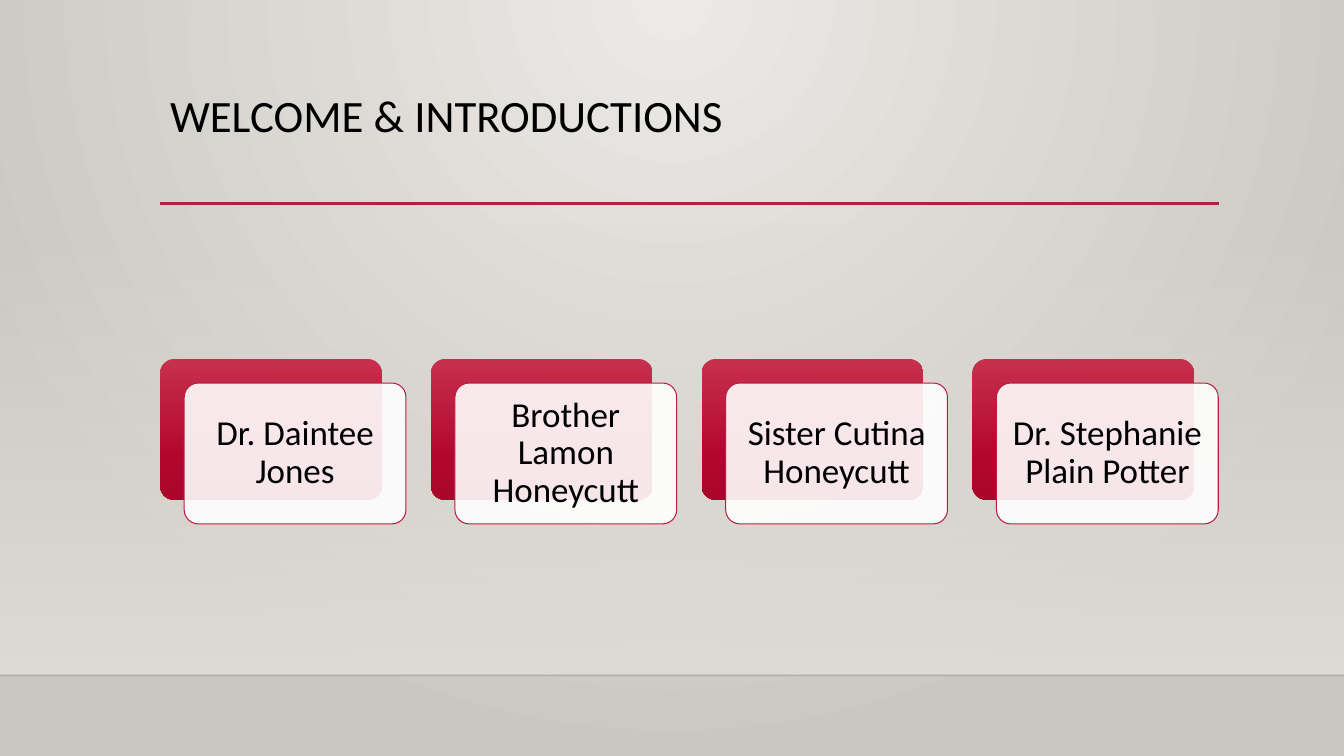
from lxml import etree
from pptx import Presentation
from pptx.dml.color import RGBColor
from pptx.enum import shapes, text
from pptx.oxml import ns
from pptx.util import Pt


def color(hex_code):
    return RGBColor.from_string(hex_code)


def add(parent, tag, **attributes):
    return etree.SubElement(parent, ns.qn(tag), {k: str(v) for k, v in attributes.items()})


def set_opacity(holder, percent):
    for paint in holder.iter(ns.qn("a:srgbClr")):
        add(paint, "a:alpha", val=percent * 1000)


class Slide:
    """Holds the deck, its style and the current page."""

    font = "Calibri"
    ink = "000000"
    accent = "B71E42"

    def __init__(self, width, height):
        self.deck = Presentation()
        self.deck.slide_width, self.deck.slide_height = Pt(width), Pt(height)
        self.page = self.deck.slides.add_slide(self.deck.slide_layouts[6])

    def gradient(self, fill, holder, stops, radial=False):
        fill.gradient()
        grad = next(holder.iter(ns.qn("a:gradFill")))
        for child in list(grad):
            grad.remove(child)
        stop_list = add(grad, "a:gsLst")
        for position, hex_code, opacity in stops:
            stop = add(stop_list, "a:gs", pos=position * 1000)
            add(stop, "a:srgbClr", val=color(hex_code))
            if opacity < 100:
                set_opacity(stop, opacity)
        if radial:
            path = add(grad, "a:path", path="circle")
            add(path, "a:fillToRect", l=43000, t=0, r=43000, b=100000)
        else:
            add(grad, "a:lin", ang=5400000, scaled=0)

    def background(self, stops):
        self.gradient(self.page.background.fill, self.page._element, stops, radial=True)

    def shape(self, kind, left, top, width, height):
        shape = self.page.shapes.add_shape(kind, Pt(left), Pt(top), Pt(width), Pt(height))
        shape.shadow.inherit = False
        shape.line.fill.background()
        return shape

    def band(self, left, top, width, height, stops):
        band = self.shape(shapes.MSO_SHAPE.RECTANGLE, left, top, width, height)
        self.gradient(band.fill, band._element, stops)

    def rounded(self, left, top, width, height):
        card = self.shape(shapes.MSO_SHAPE.ROUNDED_RECTANGLE, left, top, width, height)
        card.adjustments[0] = 0.1
        return card

    def back_card(self, left, top, width, height, stops):
        card = self.rounded(left, top, width, height)
        self.gradient(card.fill, card._element, stops)

    def front_card(self, left, top, width, height):
        card = self.rounded(left, top, width, height)
        card.fill.solid()
        card.fill.fore_color.rgb = color("FFFFFF")
        set_opacity(card._element.spPr, 90)
        card.line.color.rgb = color(self.accent)
        card.line.width = Pt(0.75)

    def rule(self, left, right, top, hex_code, weight, opacity=100):
        rule = self.page.shapes.add_connector(
            shapes.MSO_CONNECTOR.STRAIGHT, Pt(left), Pt(top), Pt(right), Pt(top))
        rule.line.color.rgb = color(hex_code)
        rule.line.width = Pt(weight)
        if opacity < 100:
            set_opacity(rule._element.spPr, opacity)
        add(rule._element.spPr, "a:effectLst")

    def label(self, words, left, top, width, height, size, centered=False):
        box = self.page.shapes.add_textbox(Pt(left), Pt(top), Pt(width), Pt(height))
        frame = box.text_frame
        frame.word_wrap = True
        para = frame.paragraphs[0]
        para.text = words
        para.line_spacing = 0.9
        para.font.name, para.font.size = self.font, Pt(size)
        para.font.color.rgb = color(self.ink)
        if centered:
            frame.margin_top = frame.margin_bottom = Pt(7.2)
            frame.vertical_anchor = text.MSO_ANCHOR.MIDDLE
            para.alignment = text.PP_ALIGN.CENTER


def main():
    names = ["Dr. Daintee Jones", "Brother Lamon Honeycutt",
             "Sister Cutina Honeycutt", "Dr. Stephanie Plain Potter"]
    red = [(0, "C7304C", 100), (69, "B3062F", 100), (100, "AA062C", 100)]
    left, top, step = 114.4, 256.4, 193.4
    width, height, shift = 158.4, 100.6, 17.2

    slide = Slide(960, 540)
    slide.background([(0, "ECEAE7", 100), (100, "CAC7C1", 100)])
    slide.band(0, 159, 960, 323.4, [(0, "DFDBD5", 0), (100, "DFDBD5", 100)])
    slide.rule(0, 960, 482.4, "000001", 1, opacity=20)
    slide.rule(left, 871, 145.2, slide.accent, 2.5)
    slide.label("WELCOME & INTRODUCTIONS", left, 63.4, 756, 82.8, 32)
    for index, name in enumerate(names):
        x = left + index * step
        slide.back_card(x, top, width, height, red)
        slide.front_card(x + shift, top + shift, width, height)
        slide.label(name, x + shift + 3, top + shift + 3, width - 6, height - 6, 25, centered=True)
    slide.deck.save("out.pptx")


if __name__ == "__main__":
    main()
